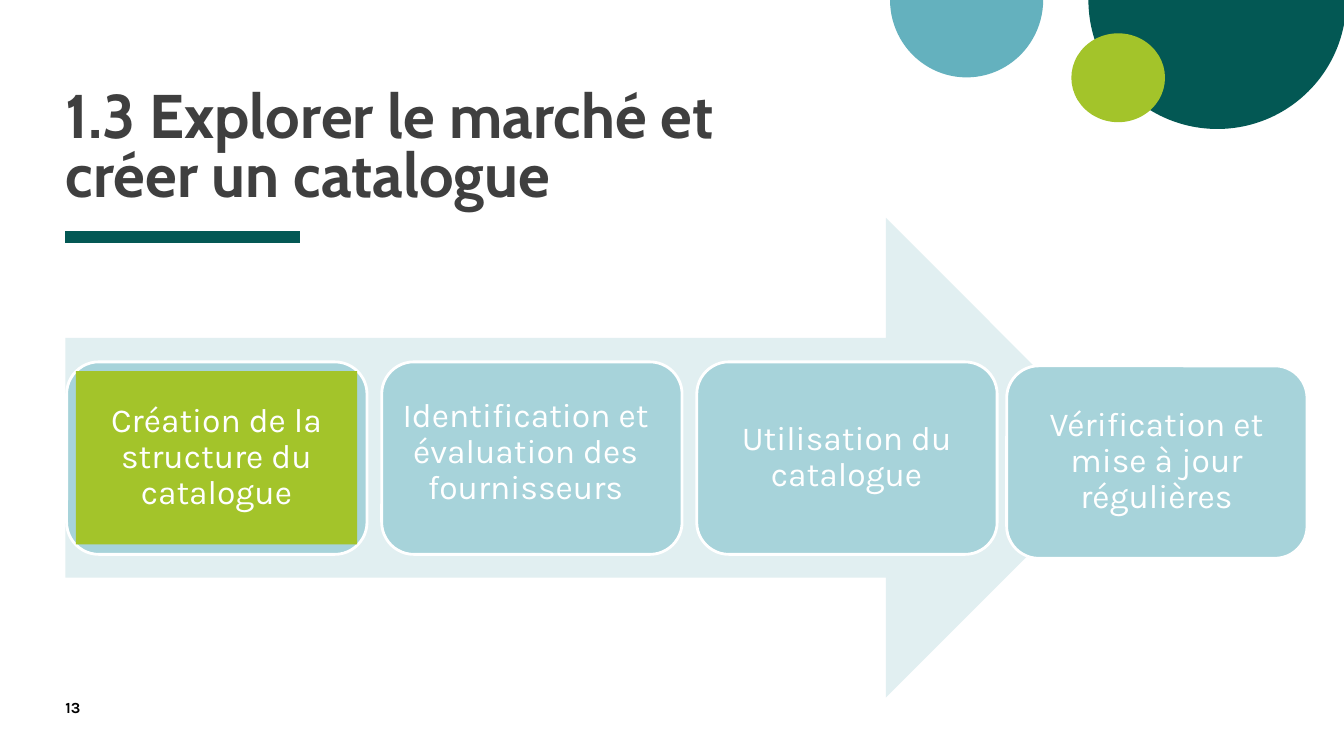
from dataclasses import dataclass

from lxml import etree
from pptx import Presentation
from pptx.dml.color import RGBColor
from pptx.enum import shapes, text
from pptx.oxml import ns
from pptx.util import Cm, Pt


@dataclass(frozen=True)
class Theme:
    dark: str = "035854"
    blue: str = "64B1BE"
    lime: str = "A3C42A"
    arrow: str = "E1EFF1"
    card: str = "A7D3DA"
    white: str = "FFFFFF"
    black: str = "000000"
    heading: str = "3F3F3F"
    heading_font: str = "Cabin"
    body_font: str = "Karla"
    title_size: int = 44
    step_size: int = 24
    number_size: int = 11


@dataclass(frozen=True)
class Frame:
    """Left, top, width and height in centimetres."""
    left: float
    top: float
    width: float
    height: float

    def lengths(self) -> tuple:
        return Cm(self.left), Cm(self.top), Cm(self.width), Cm(self.height)


@dataclass(frozen=True)
class Figure:
    kind: shapes.MSO_SHAPE
    frame: Frame
    fill: str
    adjustments: tuple = ()
    outline: str | None = None


@dataclass(frozen=True)
class Step:
    label: str
    left: float
    top: float = 9.12
    inset_left: float = 0.23
    inset_top: float = 0.23
    highlighted: bool = False


THEME = Theme()
KIND = shapes.MSO_SHAPE
HALF_DISC = (0, 108)  # from 0 to 180 degrees
FIRST_LEFT, STEP_PITCH = 1.68, 7.94

FIGURES = (
    Figure(KIND.PIE, Frame(27.43, -3.25, 6.5, 6.5), THEME.dark, HALF_DISC),
    Figure(KIND.PIE, Frame(22.43, -1.96, 3.86, 3.91), THEME.blue, HALF_DISC),
    Figure(KIND.OVAL, Frame(27, 0.84, 2.36, 2.24), THEME.lime),
    Figure(KIND.RIGHT_ARROW, Frame(1.65, 5.49, 26.72, 12.09), THEME.arrow, (0.5, 0.5)),
)

STEPS = (
    Step("Création de la structure du catalogue", FIRST_LEFT, highlighted=True),
    Step("Identification et évaluation des fournisseurs", FIRST_LEFT + STEP_PITCH,
         inset_left=0.08, inset_top=0.1),
    Step("Utilisation du catalogue", FIRST_LEFT + 2 * STEP_PITCH),
    Step("Vérification et mise à jour régulières", 25.37, top=9.22),
)


def colour(code: str) -> RGBColor:
    return RGBColor.from_string(code)


def apply(target, values: dict) -> None:
    for name, value in values.items():
        setattr(target, name, value)


def draw_figure(page, figure: Figure):
    shape = page.shapes.add_shape(figure.kind, *figure.frame.lengths())
    shape.shadow.inherit = False
    for index, value in enumerate(figure.adjustments):
        shape.adjustments[index] = value
    shape.fill.solid()
    shape.fill.fore_color.rgb = colour(figure.fill)
    if figure.outline:
        shape.line.color.rgb = colour(figure.outline)
        shape.line.width = Pt(2)
    else:
        shape.line.fill.background()
    return shape


def write(box, words: str, layout: dict, paragraph: dict, font: dict, ink: str) -> None:
    frame = box.text_frame
    apply(frame, {"word_wrap": True, "auto_size": text.MSO_AUTO_SIZE.NONE} | layout)
    para = frame.paragraphs[0]
    apply(para, paragraph)
    span = para.add_run()
    span.text = words
    apply(span.font, font)
    span.font.color.rgb = colour(ink)


def margins(size: float, bottom: float | None = None) -> dict:
    values = {f"margin_{side}": Cm(size) for side in ("left", "top", "right", "bottom")}
    if bottom is not None:
        values["margin_bottom"] = Cm(bottom)
    return values


def draw_title(page) -> None:
    title = page.shapes.title
    names = ("left", "top", "width", "height")
    apply(title, dict(zip(names, Frame(1.65, 2.36, 18.85, 4.42).lengths())))
    write(title, "1.3 Explorer le marché et créer un catalogue",
          margins(0, bottom=1.51) | {"vertical_anchor": text.MSO_ANCHOR.BOTTOM},
          {"alignment": text.PP_ALIGN.LEFT, "line_spacing": 0.8},
          {"name": THEME.heading_font, "size": Pt(THEME.title_size), "bold": True},
          THEME.heading)


def draw_title_rule(page) -> None:
    rule = page.shapes.add_connector(
        shapes.MSO_CONNECTOR.STRAIGHT, Cm(1.65), Cm(5.97), Cm(7.57), Cm(5.97))
    rule.line.color.rgb = colour(THEME.dark)
    rule.line.width = Pt(8)
    etree.SubElement(rule._element.spPr, ns.qn("a:effectLst"))


def draw_page_number(page) -> None:
    box = page.shapes.add_textbox(*Frame(1.65, 17.58, 1.45, 0.69).lengths())
    write(box, "13", margins(0), {"alignment": text.PP_ALIGN.LEFT},
          {"name": THEME.body_font, "size": Pt(THEME.number_size), "bold": True},
          THEME.black)


def draw_step(page, step: Step) -> None:
    card = Frame(step.left, step.top, 7.57, 4.85)
    draw_figure(page, Figure(KIND.ROUNDED_RECTANGLE, card, THEME.card, (0.167,), THEME.white))
    area = Frame(step.left + step.inset_left, step.top + step.inset_top, 7.09, 4.37)
    if step.highlighted:
        box = draw_figure(page, Figure(KIND.RECTANGLE, area, THEME.lime))
    else:
        box = page.shapes.add_textbox(*area.lengths())
    write(box, step.label,
          margins(0.3) | {"vertical_anchor": text.MSO_ANCHOR.MIDDLE},
          {"alignment": text.PP_ALIGN.CENTER, "line_spacing": 0.9},
          {"name": THEME.body_font, "size": Pt(THEME.step_size)}, THEME.white)


def main() -> None:
    deck = Presentation()
    deck.slide_width, deck.slide_height = Cm(33.87), Cm(19.05)
    page = deck.slides.add_slide(deck.slide_layouts.get_by_name("Title Only"))
    draw_title(page)
    for figure in FIGURES:
        draw_figure(page, figure)
    draw_title_rule(page)
    draw_page_number(page)
    for step in STEPS:
        draw_step(page, step)
    deck.save("out.pptx")


if __name__ == "__main__":
    main()
